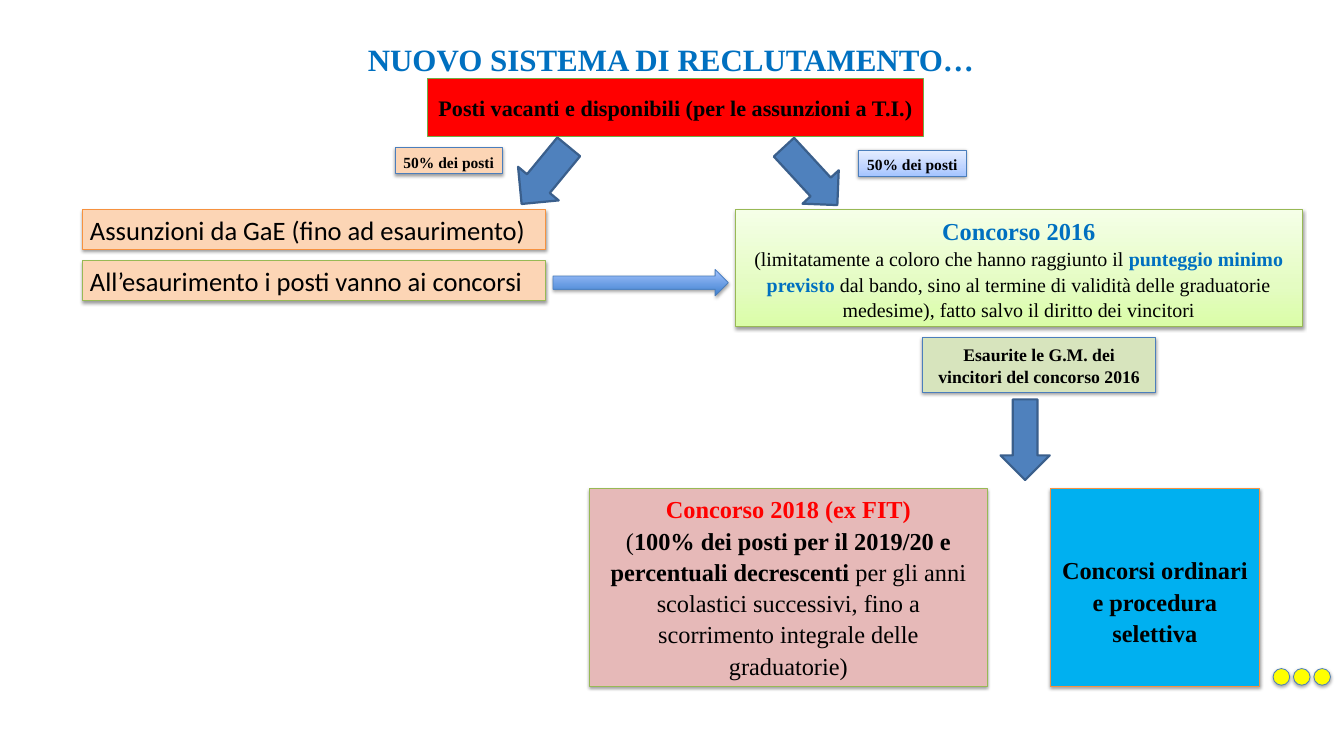
from copy import deepcopy
from dataclasses import dataclass
from typing import NamedTuple

from lxml import etree
from pptx import Presentation
from pptx.dml.color import RGBColor
from pptx.enum.shapes import MSO_SHAPE
from pptx.enum.text import MSO_ANCHOR, MSO_AUTO_SIZE, PP_ALIGN
from pptx.oxml.ns import qn
from pptx.util import Cm, Pt

RECT, OVAL = MSO_SHAPE.RECTANGLE, MSO_SHAPE.OVAL
RIGHT_ARROW, DOWN_ARROW = MSO_SHAPE.RIGHT_ARROW, MSO_SHAPE.DOWN_ARROW
TOP, MIDDLE = MSO_ANCHOR.TOP, MSO_ANCHOR.MIDDLE
LEFT, CENTER = PP_ALIGN.LEFT, PP_ALIGN.CENTER
NO_AUTOFIT = MSO_AUTO_SIZE.NONE
TITLE_ONLY = 5


# Colours, fonts and type sizes
@dataclass(frozen=True)
class Theme:
    serif: str = "Times New Roman"
    sans: str = "Calibri"
    black: str = "000000"
    red: str = "FF0000"
    title_blue: str = "0070C0"
    cyan: str = "00B0F0"
    yellow: str = "FFFF00"
    peach: str = "FCD5B5"
    rose: str = "E6B9B8"
    sage: str = "D7E4BD"
    arrow: str = "4F81BD"
    arrow_line: str = "3A5F8C"
    blue_line: str = "4B7EBC"
    green_line: str = "98B955"
    orange_line: str = "F69240"
    banner_line: str = "70AD47"
    pale_blue: tuple = ((0, "A4C4FF"), (35, "BFD4FF"), (100, "E6EEFF"))
    pale_green: tuple = ((0, "DAFDA7"), (35, "E4FCC2"), (100, "F5FFE7"))
    strong_blue: tuple = ((0, "3F80CE"), (100, "A4C4FF"))
    title: int = 28
    step: int = 24
    contest: int = 22
    banner: int = 20
    detail: int = 18
    note: int = 16
    tag: int = 14


T = Theme()


class Run(NamedTuple):
    text: str
    size: int
    bold: bool = True
    color: str = T.black
    font: str = T.serif


class Area(NamedTuple):
    left: float
    top: float
    width: float
    height: float


@dataclass(frozen=True)
class Block:
    area: Area
    fill: str | tuple
    line: str
    paragraphs: tuple = ()
    kind: MSO_SHAPE = RECT
    line_width: float = 0.75
    shadow: int = 38
    rotation: float = 0
    head_ratio: float = 0.5
    align: PP_ALIGN = CENTER
    anchor: MSO_ANCHOR = TOP
    spacing: float = 1.07
    inset_top: float = 0.13


def set_fill(s, fill: str | tuple) -> None:
    if isinstance(fill, str):
        s.fill.solid()
        s.fill.fore_color.rgb = RGBColor.from_string(fill)
        return
    s.fill.gradient()
    s.fill.gradient_angle = 90
    stops = s.fill.gradient_stops
    if len(fill) > len(stops):
        stop_list = s.element.spPr.find(".//" + qn("a:gsLst"))
        stop_list.append(deepcopy(stop_list[-1]))
    for stop, (position, color) in zip(s.fill.gradient_stops, fill):
        stop.position = position / 100
        stop.color.rgb = RGBColor.from_string(color)


def set_shadow(s, opacity: int) -> None:
    s.shadow.inherit = False
    if not opacity:
        return
    effects = s.element.spPr.find(qn("a:effectLst"))
    outer = etree.SubElement(effects, qn("a:outerShdw"), blurRad=str(Pt(3.1)),
                             dist=str(Pt(1.6)), dir="5400000", rotWithShape="0")
    color = etree.SubElement(outer, qn("a:srgbClr"), val=T.black)
    etree.SubElement(color, qn("a:alpha"), val=str(opacity * 1000))


def write(tf, paragraphs: tuple, align: PP_ALIGN, anchor: MSO_ANCHOR, spacing: float) -> None:
    tf.word_wrap = True
    tf.auto_size = NO_AUTOFIT
    tf.vertical_anchor = anchor
    for i, runs in enumerate(paragraphs):
        p = tf.add_paragraph() if i else tf.paragraphs[0]
        p.alignment = align
        p.line_spacing = spacing
        for run in runs:
            r = p.add_run()
            r.text = run.text
            r.font.name = run.font
            r.font.size = Pt(run.size)
            r.font.bold = run.bold
            r.font.color.rgb = RGBColor.from_string(run.color)


def draw(slide, block: Block) -> None:
    s = slide.shapes.add_shape(block.kind, *map(Cm, block.area))
    set_fill(s, block.fill)
    s.line.color.rgb = RGBColor.from_string(block.line)
    s.line.width = Pt(block.line_width)
    set_shadow(s, block.shadow)
    s.rotation = block.rotation
    if block.kind == RIGHT_ARROW:
        s.adjustments[0] = block.head_ratio
    if block.paragraphs:
        s.text_frame.margin_top = Cm(block.inset_top)
        write(s.text_frame, block.paragraphs, block.align, block.anchor, block.spacing)


def tag(left: float, top: float, fill: str | tuple) -> Block:
    return Block(Area(left, top, 3.42, 0.84), fill, T.blue_line,
                 ((Run("50% dei posti", T.tag),),))


def step(top: float, line: str, text: str) -> Block:
    return Block(Area(2.62, top, 14.78, 1.27), T.peach, line,
                 ((Run(text, T.step, False, font=T.sans),),), align=LEFT, spacing=1)


def flow_arrow(area: Area, kind: MSO_SHAPE = RIGHT_ARROW, rotation: float = 0) -> Block:
    return Block(area, T.arrow, T.arrow_line, kind=kind, line_width=2, shadow=0,
                 rotation=rotation, head_ratio=0.56)


def dot(index: int) -> Block:
    return Block(Area(40.59 + 0.65 * index, 21.31, 0.53, 0.53), T.yellow, T.blue_line,
                 kind=OVAL, shadow=35)


BLOCKS = (
    # Available posts and their two halves
    Block(Area(13.64, 2.51, 15.8, 1.85), T.red, T.banner_line,
          ((Run("Posti vacanti e disponibili (per le assunzioni a T.I.)", T.banner),),),
          line_width=1, shadow=0, anchor=MIDDLE, spacing=1),
    tag(12.6, 4.7, T.peach),
    tag(27.38, 4.78, T.pale_blue),
    flow_arrow(Area(16.2, 4.75, 2.36, 1.68), rotation=129.5),
    flow_arrow(Area(24.59, 4.83, 2.51, 1.57), rotation=47.3),
    # 2016 contest
    Block(Area(23.44, 6.68, 18.08, 3.73), T.pale_green, T.green_line, (
        (Run("Concorso 2016", T.contest, color=T.title_blue),),
        (Run("(limitatamente a coloro che hanno raggiunto il ", T.detail, False),
         Run("punteggio minimo previsto", T.detail, color=T.title_blue),
         Run(" dal bando, sino al termine di validità delle graduatorie medesime), "
             "fatto salvo il diritto dei vincitori", T.detail, False)))),
    Block(Area(29.41, 10.77, 7.44, 1.73), T.sage, T.blue_line,
          ((Run("Esaurite le G.M. dei vincitori del concorso 2016", T.note),),)),
    # Ranking list branch
    step(6.68, T.orange_line, "Assunzioni da GaE (fino ad esaurimento)"),
    step(8.31, T.green_line, "All’esaurimento i posti vanno ai concorsi"),
    Block(Area(17.63, 8.59, 5.59, 0.84), T.strong_blue, T.blue_line,
          kind=RIGHT_ARROW, shadow=35),
    # Later contests
    Block(Area(18.8, 15.57, 12.67, 6.3), T.rose, T.green_line, (
        (Run("Concorso 2018 (ex FIT)", T.contest, color=T.red),),
        (Run("(", T.contest, False),
         Run("100% dei posti per il 2019/20 e percentuali decrescenti ", T.contest),
         Run("per gli anni scolastici successivi, fino a scorrimento integrale "
             "delle graduatorie)", T.contest, False)))),
    Block(Area(33.48, 15.57, 6.68, 6.3), T.cyan, T.orange_line,
          ((Run("Concorsi ordinari e procedura selettiva", T.contest),),), inset_top=2.07),
    flow_arrow(Area(31.9, 12.73, 1.57, 2.57), DOWN_ARROW),
    # Continuation dots
    *map(dot, range(3)),
)


def main() -> None:
    prs = Presentation()
    prs.slide_width, prs.slide_height = Cm(42.85), Cm(24)
    slide = prs.slides.add_slide(prs.slide_layouts[TITLE_ONLY])

    # Title
    title = slide.shapes.title
    title.left, title.top, title.width, title.height = map(Cm, Area(1.27, 1.17, 40.23, 1.45))
    write(title.text_frame, ((Run("NUOVO SISTEMA DI RECLUTAMENTO…", T.title, color=T.title_blue),),),
          CENTER, MIDDLE, 1)

    # Diagram
    for block in BLOCKS:
        draw(slide, block)
    prs.save("out.pptx")


if __name__ == "__main__":
    main()
